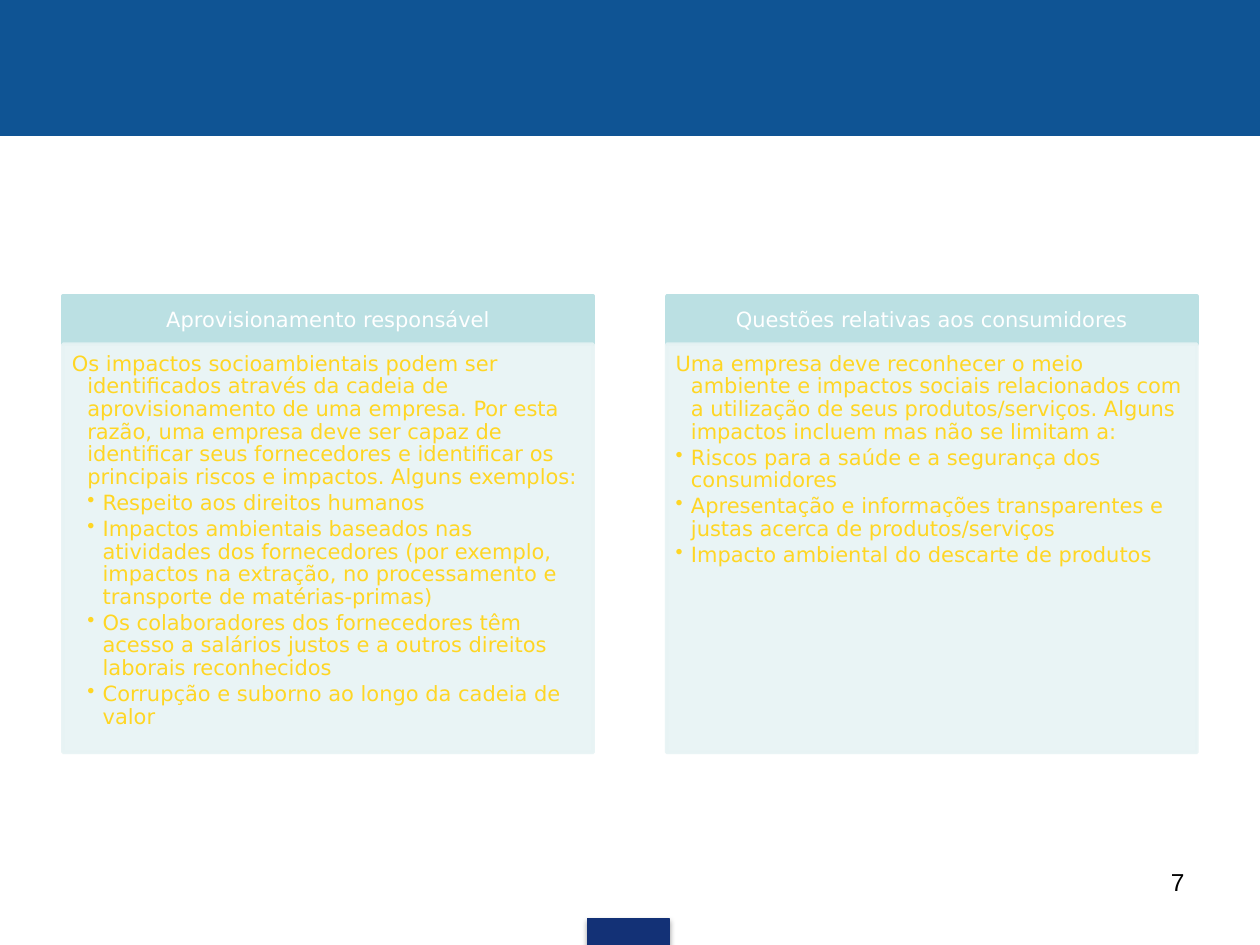
"""Build a slide with two headed panels on responsible sourcing and consumer issues."""
from dataclasses import dataclass

from lxml.etree import SubElement
from pptx import Presentation
from pptx.dml.color import RGBColor as Rgb
from pptx.enum.shapes import MSO_SHAPE as Preset
from pptx.enum.text import MSO_ANCHOR as Anchor, PP_ALIGN as Align
from pptx.oxml.ns import qn
from pptx.util import Cm, Pt

PANELS = [
    {
        "heading": "Aprovisionamento responsável",
        "intro": "Os impactos socioambientais podem ser identificados através da cadeia de "
                 "aprovisionamento de uma empresa. Por esta razão, uma empresa deve ser capaz de "
                 "identificar seus fornecedores e identificar os principais riscos e impactos. "
                 "Alguns exemplos:",
        "level": 2,
        "bullets": [
            "Respeito aos direitos humanos",
            "Impactos ambientais baseados nas atividades dos fornecedores (por exemplo, impactos "
            "na extração, no processamento e transporte de matérias-primas)",
            "Os colaboradores dos fornecedores têm acesso a salários justos e a outros direitos "
            "laborais reconhecidos",
            "Corrupção e suborno ao longo da cadeia de valor",
        ],
    },
    {
        "heading": "Questões relativas aos consumidores",
        "intro": "Uma empresa deve reconhecer o meio ambiente e impactos sociais relacionados com "
                 "a utilização de seus produtos/serviços. Alguns impactos incluem mas não se "
                 "limitam a:",
        "level": 1,
        "bullets": [
            "Riscos para a saúde e a segurança dos consumidores",
            "Apresentação e informações transparentes e justas acerca de produtos/serviços",
            "Impacto ambiental do descarte de produtos",
        ],
    },
]
PAGE_NUMBER = "7"


@dataclass(frozen=True)
class Theme:
    """Colours, fonts and type sizes."""
    banner: str = "0F5494"
    tab: str = "133176"
    heading_fill: str = "BBE0E3"
    body_fill: str = "E7F3F4"
    heading_text: str = "FFFFFF"
    body_text: str = "FFD624"
    number_text: str = "000000"
    panel_font: str = "DejaVu Sans"
    number_font: str = "Arial"
    panel_size: int = 12
    number_size: int = 14


THEME = Theme()
WIDTH, HEIGHT = 25.4, 19.05
MARGIN, PANEL_WIDTH = 1.27, 10.69
HEADING_TOP, HEADING_HEIGHT, BODY_HEIGHT = 5.97, 0.97, 8.23
INDENT = 0.31


def add_block(page, left, top, width, height, color, line_width, opacity=100):
    """Add a flat rectangle whose outline matches its fill."""
    block = page.shapes.add_shape(Preset.RECTANGLE, Cm(left), Cm(top), Cm(width), Cm(height))
    block.shadow.inherit = False
    block.fill.solid()
    block.fill.fore_color.rgb = block.line.color.rgb = Rgb.from_string(color)
    block.line.width = Pt(line_width)
    if opacity < 100:
        for tint in block._element.spPr.iter(qn("a:srgbClr")):
            SubElement(tint, qn("a:alpha"), val=str(opacity * 1000))
    return block


def add_shadow(block):
    """Give a block a soft shadow straight below it."""
    effects = block._element.spPr.find(qn("a:effectLst"))
    shadow = SubElement(effects, qn("a:outerShdw"), blurRad=str(Pt(3.1)), dist=str(Pt(1.8)),
                        dir="5400000", rotWithShape="0")
    tint = SubElement(shadow, qn("a:srgbClr"), val="000000")
    SubElement(tint, qn("a:alpha"), val="35000")


def set_font(para, name, size, color):
    """Set the face, size and colour of a paragraph."""
    para.font.name = name
    para.font.size = Pt(size)
    para.font.color.rgb = Rgb.from_string(color)


def set_insets(frame, left, top, right, bottom):
    """Set the four text margins and wrap the text."""
    frame.word_wrap = True
    frame.margin_left, frame.margin_top = Cm(left), Cm(top)
    frame.margin_right, frame.margin_bottom = Cm(right), Cm(bottom)


def fill_panel_para(para, text, align, color, space_after):
    """Write one panel paragraph with the shared spacing."""
    para.text = text
    para.alignment = align
    para.line_spacing = 0.9
    para.space_after = Pt(space_after)
    set_font(para, THEME.panel_font, THEME.panel_size, color)


def add_body_para(para, text, level, bullet):
    """Write one hanging paragraph, with or without a bullet."""
    para.level = level
    props = para._p.get_or_add_pPr()
    props.set("marL", str(Cm(INDENT * level)))
    props.set("indent", str(-Cm(INDENT)))
    if bullet:
        SubElement(props, qn("a:buChar"), char="•")
    else:
        SubElement(props, qn("a:buNone"))
    fill_panel_para(para, text, Align.LEFT, THEME.body_text, 1.8)


def add_panel(page, left, panel):
    """Add a heading bar and the body below it."""
    heading = add_block(page, left, HEADING_TOP, PANEL_WIDTH, HEADING_HEIGHT,
                        THEME.heading_fill, 2)
    frame = heading.text_frame
    set_insets(frame, 0.24, 0.13, 0.24, 0.13)
    frame.vertical_anchor = Anchor.MIDDLE
    fill_panel_para(frame.paragraphs[0], panel["heading"], Align.CENTER, THEME.heading_text, 4.2)

    body = add_block(page, left, HEADING_TOP + HEADING_HEIGHT, PANEL_WIDTH, BODY_HEIGHT,
                     THEME.body_fill, 2, opacity=90)
    frame = body.text_frame
    set_insets(frame, 0.18, 0.18, 0.24, 0.25)
    frame.vertical_anchor = Anchor.TOP
    add_body_para(frame.paragraphs[0], panel["intro"], 1, bullet=False)
    for text in panel["bullets"]:
        add_body_para(frame.add_paragraph(), text, panel["level"], bullet=True)


def add_page_number(page):
    """Add the page number at the lower right."""
    width = 5.93
    box = page.shapes.add_textbox(Cm(WIDTH - MARGIN - width), Cm(17.35), Cm(width), Cm(1.32))
    box.text_frame.word_wrap = True
    para = box.text_frame.paragraphs[0]
    para.text = PAGE_NUMBER
    para.alignment = Align.RIGHT
    set_font(para, THEME.number_font, THEME.number_size, THEME.number_text)


def main():
    """Build and save the deck."""
    deck = Presentation()
    deck.slide_width, deck.slide_height = Cm(WIDTH), Cm(HEIGHT)
    page = deck.slides.add_slide(deck.slide_layouts[6])
    add_block(page, 0, 0, WIDTH, 2.74, THEME.banner, 0.75)
    add_shadow(add_block(page, 11.84, 18.52, 1.65, 0.53, THEME.tab, 0.75))
    step = WIDTH - 2 * MARGIN - PANEL_WIDTH
    for index, panel in enumerate(PANELS):
        add_panel(page, MARGIN + index * step, panel)
    add_page_number(page)
    deck.save("out.pptx")


if __name__ == "__main__":
    main()
